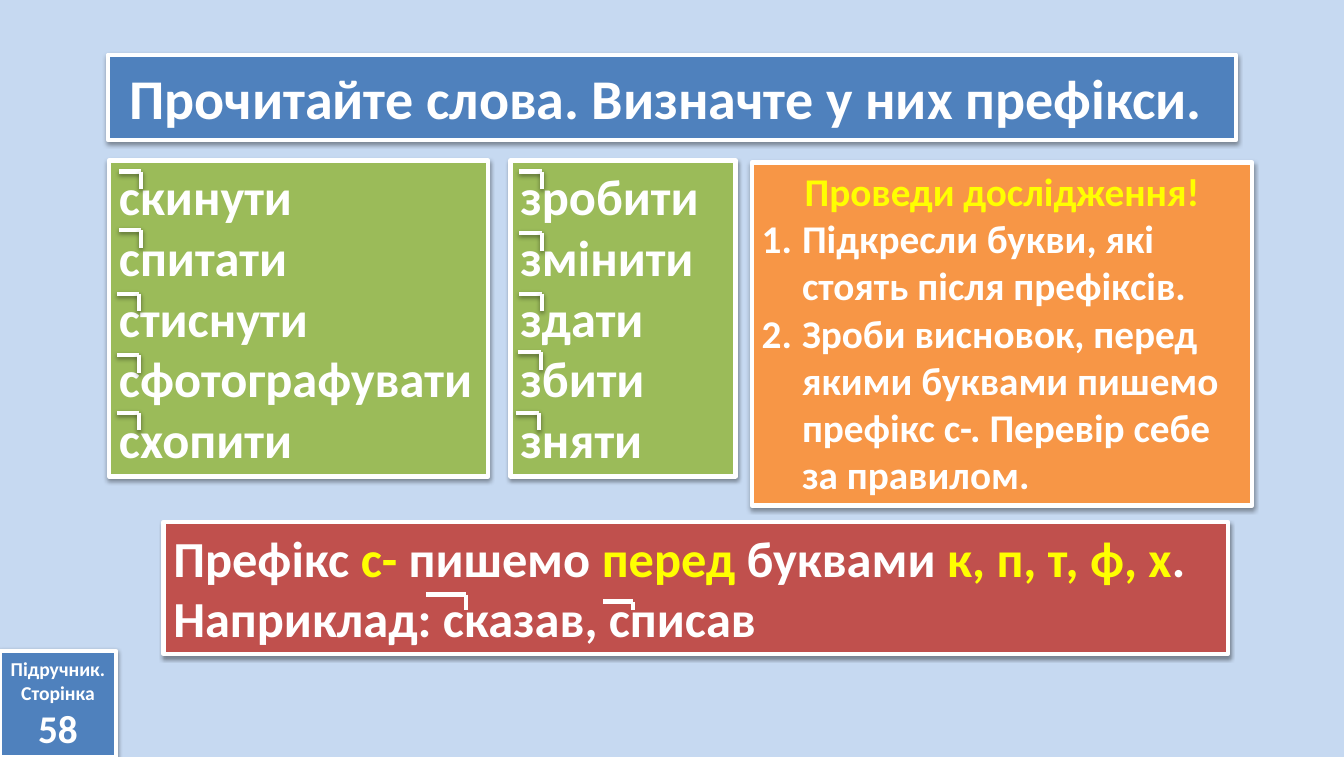
"""Build a slide about the Ukrainian prefixes с- and з-."""
import pptx
import pptx.dml.color
import pptx.enum.shapes
import pptx.enum.text
import pptx.oxml
import pptx.oxml.ns
import pptx.util

Pt = pptx.util.Pt
ALIGN = pptx.enum.text.PP_ALIGN
ANCHOR = pptx.enum.text.MSO_ANCHOR

FONT = "Calibri"
BACKGROUND, WHITE, YELLOW = "C6D9F1", "FFFFFF", "FFFF00"
BLUE, GREEN, ORANGE, RED = "4F81BD", "9BBB59", "F79646", "C0504D"

TITLE = "Прочитайте слова. Визначте у них префікси. "
S_WORDS = ["скинути", "спитати", "стиснути", "сфотографувати", "схопити"]
Z_WORDS = ["зробити", "змінити", "здати", "збити", "зняти"]
TASK_TITLE = "Проведи дослідження!"
TASKS = [
    "Підкресли букви, які стоять після префіксів.",
    "Зроби висновок, перед якими буквами пишемо префікс с-. Перевір себе за правилом.",
]
RULE = [
    ("Префікс ", WHITE), ("с- ", YELLOW), ("пишемо ", WHITE), ("перед", YELLOW),
    (" буквами ", WHITE), ("к, п, т, ф, х", YELLOW), (".", WHITE),
]
EXAMPLE = "Наприклад: сказав, списав"
PAGE = [("Підручник.", 14), ("Сторінка", 14), ("58", 28)]

TITLE_BOX = (77, 39, 805, 61)
S_BOX = (77.8, 114.5, 270.7, 225.4)
Z_BOX = (364.3, 114.5, 160.6, 225.4)
PAGE_BOX = (0, 464.4, 82.8, 75.6)
TASK_BOX = (536.4, 115.9, 357.1, 244.8)
RULE_BOX = (116.6, 372.2, 759.6, 94.3)

WORD_MARK = (16.2, 12.6)
WORD_CORNERS = [
    (100.8, 122.4), (100.8, 164.2), (99.4, 209.5), (99.4, 253.4), (99.4, 294.5),
    (386.6, 122.4), (386.6, 166.3), (386.6, 209.5), (385.9, 251.3), (384.5, 294.5),
]
EXAMPLE_MARKS = [(451.4, 429.1, 20.9, 5.8), (332.6, 424.1, 28.8, 10.8)]

SHADOW = (
    '<a:outerShdw xmlns:a="http://schemas.openxmlformats.org/drawingml/2006/main"'
    ' blurRad="39370" dist="20320" dir="5400000" rotWithShape="0">'
    '<a:srgbClr val="000000"><a:alpha val="38000"/></a:srgbClr></a:outerShdw>'
)


def color(value):
    return pptx.dml.color.RGBColor.from_string(value)


def style_line(shape, shadow=True):
    shape.line.color.rgb = color(WHITE)
    shape.line.width = Pt(3)
    effects = pptx.oxml.parse_xml(
        '<a:effectLst xmlns:a="http://schemas.openxmlformats.org/drawingml/2006/main"/>')
    if shadow:
        effects.append(pptx.oxml.parse_xml(SHADOW))
    shape._element.spPr.append(effects)


def add_box(slide, box, fill, paragraphs, align=ALIGN.LEFT, anchor=ANCHOR.TOP):
    shape = slide.shapes.add_shape(
        pptx.enum.shapes.MSO_SHAPE.RECTANGLE, *[Pt(length) for length in box])
    shape.fill.solid()
    shape.fill.fore_color.rgb = color(fill)
    style_line(shape)
    frame = shape.text_frame
    frame.word_wrap = True
    frame.vertical_anchor = anchor
    frame.text = "\n" * (len(paragraphs) - 1)
    for paragraph, (size, runs) in zip(frame.paragraphs, paragraphs):
        paragraph.alignment = align
        for text, run_color in runs:
            run = paragraph.add_run()
            run.text = text
            run.font.name = FONT
            run.font.size = Pt(size)
            run.font.bold = True
            run.font.color.rgb = color(run_color)
    return shape


def number_paragraph(paragraph):
    properties = paragraph._p.get_or_add_pPr()
    indent = Pt(28.8)
    properties.set("marL", str(indent))
    properties.set("indent", str(-indent))
    numbering = properties.makeelement(pptx.oxml.ns.qn("a:buAutoNum"), {"type": "arabicPeriod"})
    properties.append(numbering)


def add_prefix_mark(slide, right, top, width, height, shadow):
    group = slide.shapes.add_group_shape()
    for end_x, end_y in [(right - width, top), (right, top + height)]:
        line = group.shapes.add_connector(
            pptx.enum.shapes.MSO_CONNECTOR.STRAIGHT,
            Pt(right), Pt(top), Pt(end_x), Pt(end_y))
        style_line(line, shadow)


def main():
    presentation = pptx.Presentation()
    presentation.slide_width, presentation.slide_height = Pt(959), Pt(540)
    slide = presentation.slides.add_slide(presentation.slide_layouts[6])
    slide.background.fill.solid()
    slide.background.fill.fore_color.rgb = color(BACKGROUND)

    add_box(slide, TITLE_BOX, BLUE, [(40, [(TITLE, WHITE)])], ALIGN.CENTER, ANCHOR.MIDDLE)
    for box, words in [(S_BOX, S_WORDS), (Z_BOX, Z_WORDS)]:
        add_box(slide, box, GREEN, [(36, [(word, WHITE)]) for word in words])
    for right, top in WORD_CORNERS:
        add_prefix_mark(slide, right, top, *WORD_MARK, shadow=True)

    add_box(slide, PAGE_BOX, BLUE, [(size, [(text, WHITE)]) for text, size in PAGE],
            ALIGN.CENTER, ANCHOR.MIDDLE)

    task_lines = [(28, [(TASK_TITLE, YELLOW)])] + [(28, [(task, WHITE)]) for task in TASKS]
    task_box = add_box(slide, TASK_BOX, ORANGE, task_lines)
    heading, *steps = task_box.text_frame.paragraphs
    heading.alignment = ALIGN.CENTER
    for step in steps:
        number_paragraph(step)

    add_box(slide, RULE_BOX, RED, [(36, RULE), (36, [(EXAMPLE, WHITE)])])
    for mark in EXAMPLE_MARKS:
        add_prefix_mark(slide, *mark, shadow=False)

    presentation.save("out.pptx")


if __name__ == "__main__":
    main()
